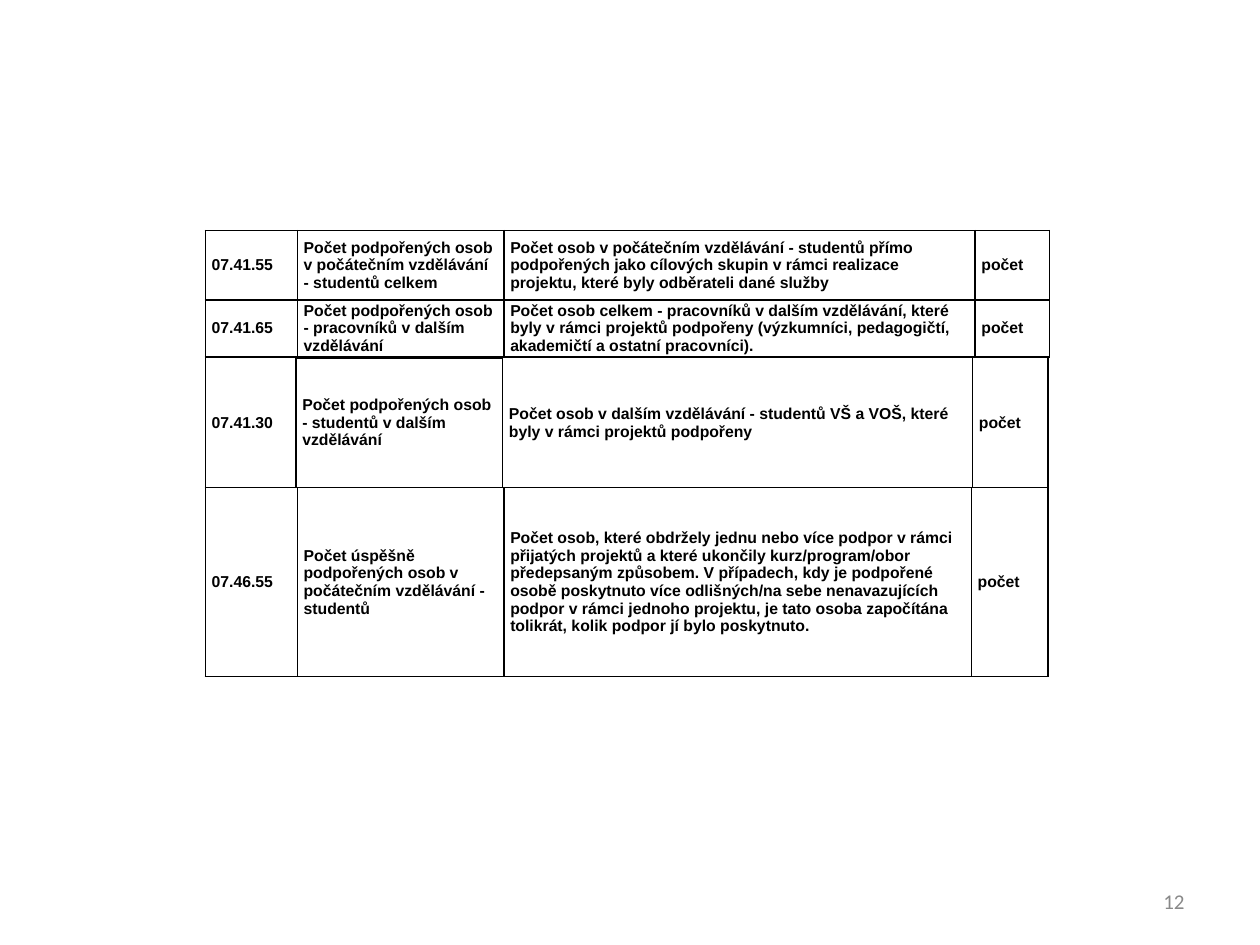
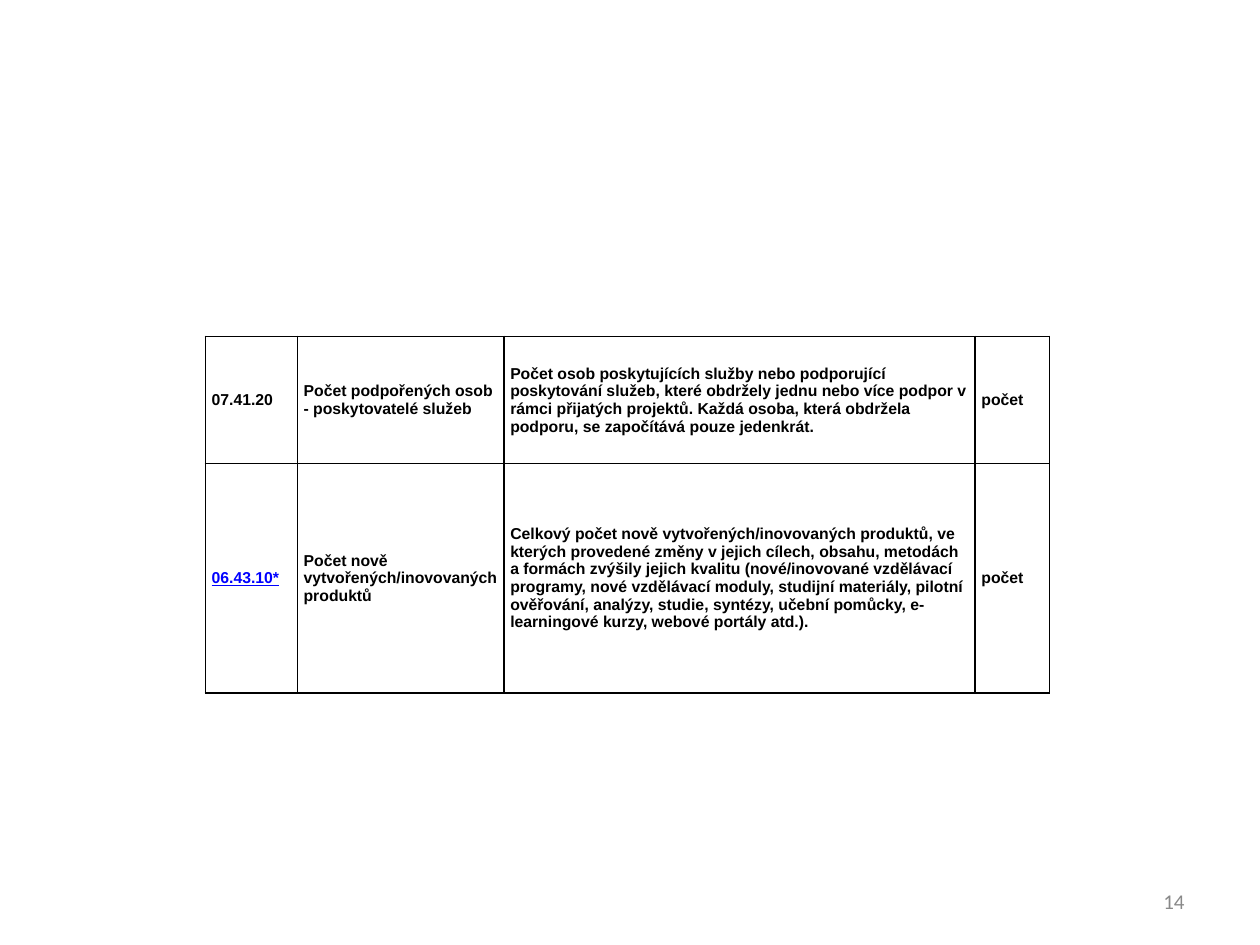
import pptx
import pptx.util
import pptx.dml.color
import pptx.enum.text
import pptx.oxml
import pptx.oxml.ns
from pptx.util import Inches

BLACK = pptx.dml.color.RGBColor(0x00, 0x00, 0x00)
LINK_BLUE = pptx.dml.color.RGBColor(0x00, 0x00, 0xFF)
NUMBER_GREY = pptx.dml.color.RGBColor(0x89, 0x89, 0x89)
MIDDLE = pptx.enum.text.MSO_ANCHOR.MIDDLE
TABLE_LEFT = 1.63
WIDE_COLUMNS = [0.73, 1.64, 3.74, 0.59]
ALL_COLUMNS = {0, 1, 2, 3}
UNIT = "počet"
LINKED_CODES = {"06.43.10*"}

slides = [
    ("12", [
        (1.83, WIDE_COLUMNS, [0.55, 0.42], ALL_COLUMNS, [
            ("07.41.55",
             "Počet podpořených osob v počátečním vzdělávání - studentů celkem",
             "Počet osob v počátečním vzdělávání - studentů přímo podpořených jako cílových skupin "
             "v rámci realizace projektu, které byly odběrateli dané služby"),
            ("07.41.65",
             "Počet podpořených osob - pracovníků v dalším vzdělávání",
             "Počet osob celkem - pracovníků v dalším vzdělávání, které byly v rámci projektů podpořeny "
             "(výzkumníci, pedagogičtí, akademičtí a ostatní pracovníci)."),
        ]),
        (2.84, [0.72, 1.64, 3.73, 0.6], [1.03], {1}, [
            ("07.41.30",
             "Počet podpořených osob - studentů v dalším vzdělávání",
             "Počet osob v dalším vzdělávání - studentů VŠ a VOŠ, které byly v rámci projektů podpořeny"),
        ]),
        (3.87, [0.73, 1.64, 3.71, 0.61], [1.5], set(), [
            ("07.46.55",
             "Počet úspěšně podpořených osob v počátečním vzdělávání - studentů",
             "Počet osob, které obdržely jednu nebo více podpor v rámci přijatých projektů a které "
             "ukončily kurz/program/obor předepsaným způsobem. V případech, kdy je podpořené osobě "
             "poskytnuto více odlišných/na sebe nenavazujících podpor v rámci jednoho projektu, je "
             "tato osoba započítána tolikrát, kolik podpor jí bylo poskytnuto."),
        ]),
    ]),
    ("14", [
        (2.67, WIDE_COLUMNS, [1.01, 1.82], ALL_COLUMNS, [
            ("07.41.20",
             "Počet podpořených osob - poskytovatelé služeb",
             "Počet osob poskytujících služby nebo podporující poskytování služeb, které obdržely "
             "jednu nebo více podpor v rámci přijatých projektů. Každá osoba, která obdržela podporu, "
             "se započítává pouze jedenkrát."),
            ("06.43.10*",
             "Počet nově vytvořených/inovovaných produktů",
             "Celkový počet nově vytvořených/inovovaných produktů, ve kterých provedené změny v jejich "
             "cílech, obsahu, metodách a formách zvýšily jejich kvalitu (nové/inovované vzdělávací "
             "programy, nové vzdělávací moduly, studijní materiály, pilotní ověřování, analýzy, studie, "
             "syntézy, učební pomůcky, e-learningové kurzy, webové portály atd.)."),
        ]),
    ]),
]


def set_borders(cell, has_top):
    properties = cell._tc.get_or_add_tcPr()
    for position, side in enumerate("LRTB"):
        visible = side != "T" or has_top
        paint = f'<a:solidFill><a:srgbClr val="{BLACK}"/></a:solidFill>' if visible else "<a:noFill/>"
        line = pptx.oxml.parse_xml(
            f'<a:ln{side} {pptx.oxml.ns.nsdecls("a")} w="{pptx.util.Pt(1)}">{paint}</a:ln{side}>')
        properties.insert(position, line)


def add_span(paragraph, text, font_name, size, color):
    span = paragraph.add_run()
    span.text = text
    span.font.name = font_name
    span.font.size = pptx.util.Pt(size)
    span.font.color.rgb = color
    return span


deck = pptx.Presentation()
deck.slide_width = Inches(10)
deck.slide_height = Inches(7.5)

for page_number, indicator_tables in slides:
    page = deck.slides.add_slide(deck.slide_layouts[6])

    number_box = page.shapes.add_textbox(Inches(7.17), Inches(6.95), Inches(2.33), Inches(0.4))
    number_box.text_frame.word_wrap = True
    number_box.text_frame.vertical_anchor = MIDDLE
    number_para = number_box.text_frame.paragraphs[0]
    number_para.alignment = pptx.enum.text.PP_ALIGN.RIGHT
    add_span(number_para, page_number, "Calibri", 12, NUMBER_GREY)

    for top, widths, heights, topped_columns, indicators in indicator_tables:
        table = page.shapes.add_table(
            len(heights), len(widths), Inches(TABLE_LEFT), Inches(top),
            Inches(sum(widths)), Inches(sum(heights))).table
        table.first_row = False
        table.horz_banding = False
        for column, width in zip(table.columns, widths):
            column.width = Inches(width)
        for row, height, indicator in zip(table.rows, heights, indicators):
            row.height = Inches(height)
            for column_index, (cell, text) in enumerate(zip(row.cells, (*indicator, UNIT))):
                cell.fill.background()
                cell.vertical_anchor = MIDDLE
                cell.margin_left = cell.margin_right = Inches(0.05)
                cell.margin_top = cell.margin_bottom = 0
                set_borders(cell, column_index in topped_columns)
                linked = text in LINKED_CODES
                span = add_span(cell.text_frame.paragraphs[0], text, "Arial", 9,
                                LINK_BLUE if linked else BLACK)
                span.font.bold = True
                span.font.underline = linked

deck.save("out.pptx")
